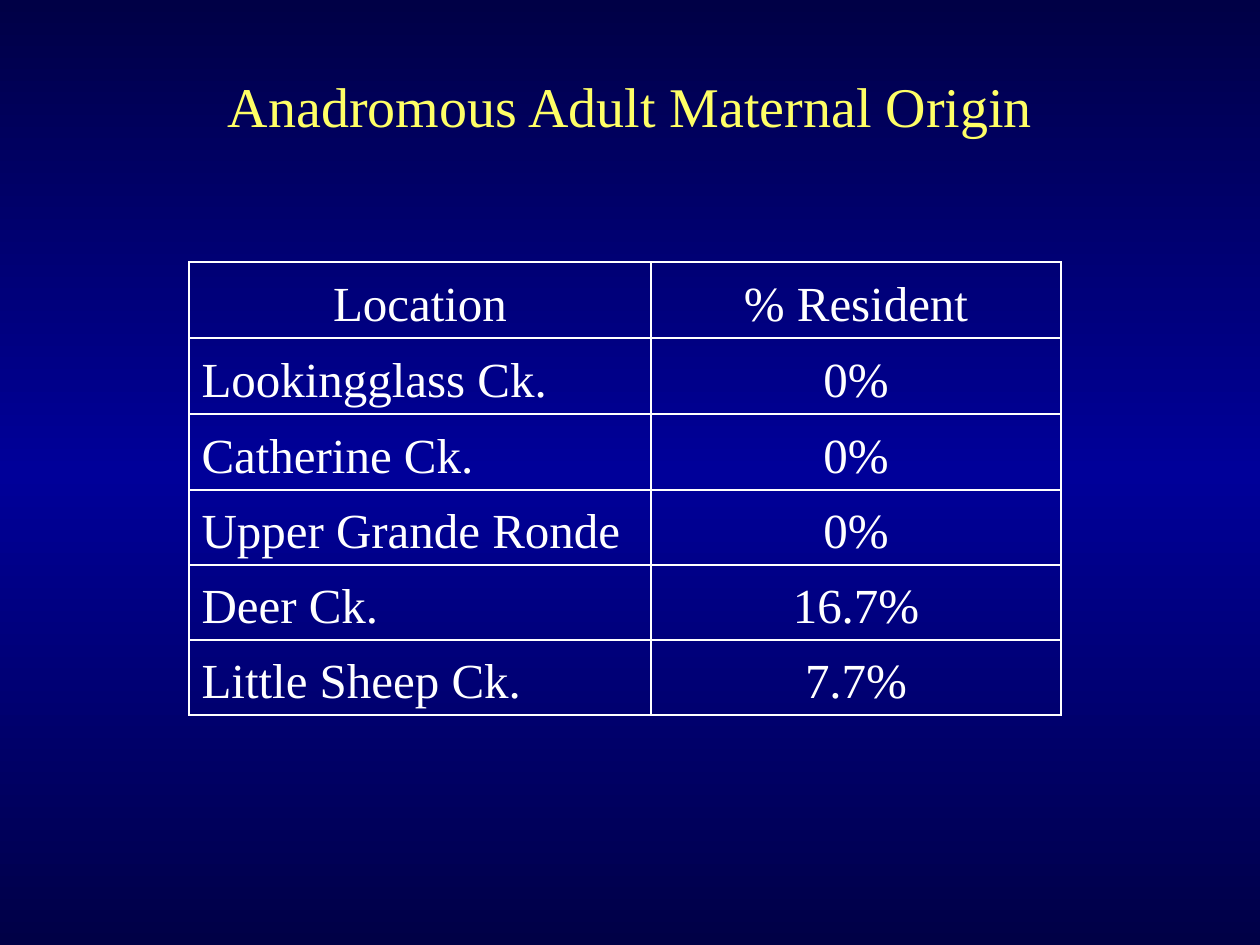
from dataclasses import dataclass
from typing import Any

from pptx import Presentation
from pptx.dml.color import RGBColor
from pptx.enum.text import MSO_ANCHOR as Anchor, PP_ALIGN as Align
from pptx.oxml import parse_xml
from pptx.oxml.ns import nsdecls
from pptx.util import Pt

EMU_PER_PX = 914400 / 126
NS = nsdecls("a", "p")


def px(n):
    return round(n * EMU_PER_PX)


def color(hex_rgb):
    return RGBColor.from_string(hex_rgb)


def write(tf, text, size, fill, font, align=Align.LEFT, space_pct=0):
    p = tf.paragraphs[0]
    p.alignment = align
    if space_pct:
        p._p.get_or_add_pPr().append(parse_xml(
            f'<a:spcBef {NS}><a:spcPct val="{space_pct * 1000}"/></a:spcBef>'))
    r = p.add_run()
    r.text = text
    r.font.name = font
    r.font.size = Pt(size)
    r.font.color.rgb = color(fill)


@dataclass
class Deck:
    """The style and the current slide."""
    s: Any
    font: str = "Times New Roman"
    title_color: str = "FFFF66"
    text_color: str = "FFFFFF"
    edge_color: str = "000046"
    middle_color: str = "000099"

    def background(self):
        stops = "".join(
            f'<a:gs pos="{pos}"><a:srgbClr val="{c}"/></a:gs>'
            for pos, c in ((0, self.edge_color), (50000, self.middle_color),
                           (100000, self.edge_color)))
        self.s._element.cSld.insert(0, parse_xml(
            f'<p:bg {NS}><p:bgPr><a:gradFill rotWithShape="0">'
            f'<a:gsLst>{stops}</a:gsLst><a:lin ang="5400000" scaled="1"/>'
            f'</a:gradFill><a:effectLst/></p:bgPr></p:bg>'))

    def title(self, text, x, y, w, h):
        tf = self.s.shapes.add_textbox(px(x), px(y), px(w), px(h)).text_frame
        tf.word_wrap = True
        tf.vertical_anchor = Anchor.MIDDLE
        write(tf, text, 32, self.title_color, self.font, Align.CENTER)

    def borders(self, cell):
        tcPr = cell._tc.get_or_add_tcPr()
        for i, side in enumerate(("lnL", "lnR", "lnT", "lnB")):
            tcPr.insert(i, parse_xml(
                f'<a:{side} {NS} w="12700"><a:solidFill>'
                f'<a:srgbClr val="{self.text_color}"/></a:solidFill></a:{side}>'))

    def table(self, rows, x, y, widths, heights):
        """Header and all but the first column are centred."""
        tbl = self.s.shapes.add_table(
            len(rows), len(widths), px(x), px(y),
            px(sum(widths)), px(sum(heights))).table
        tbl.first_row = tbl.horz_banding = False
        for col, w in zip(tbl.columns, widths):
            col.width = px(w)
        for i, (values, h) in enumerate(zip(rows, heights)):
            tbl.rows[i].height = px(h)
            for j, text in enumerate(values):
                cell = tbl.cell(i, j)
                cell.fill.background()
                cell.vertical_anchor = Anchor.BOTTOM
                self.borders(cell)
                align = Align.CENTER if i == 0 or j > 0 else Align.LEFT
                write(cell.text_frame, text, 28, self.text_color, self.font,
                      align, space_pct=20)


def main():
    prs = Presentation()
    prs.slide_width, prs.slide_height = px(1260), px(945)
    deck = Deck(prs.slides.add_slide(prs.slide_layouts[6]))
    deck.background()
    deck.title("Anadromous Adult Maternal Origin", 95, 53, 1071, 105)
    origins = [
        ("Location", "% Resident"),
        ("Lookingglass Ck.", "0%"),
        ("Catherine Ck.", "0%"),
        ("Upper Grande Ronde", "0%"),
        ("Deer Ck.", "16.7%"),
        ("Little Sheep Ck.", "7.7%"),
    ]
    deck.table(origins, 189, 262, [462, 410], [76] * 3 + [75] * 3)
    prs.save("out.pptx")


if __name__ == "__main__":
    main()
